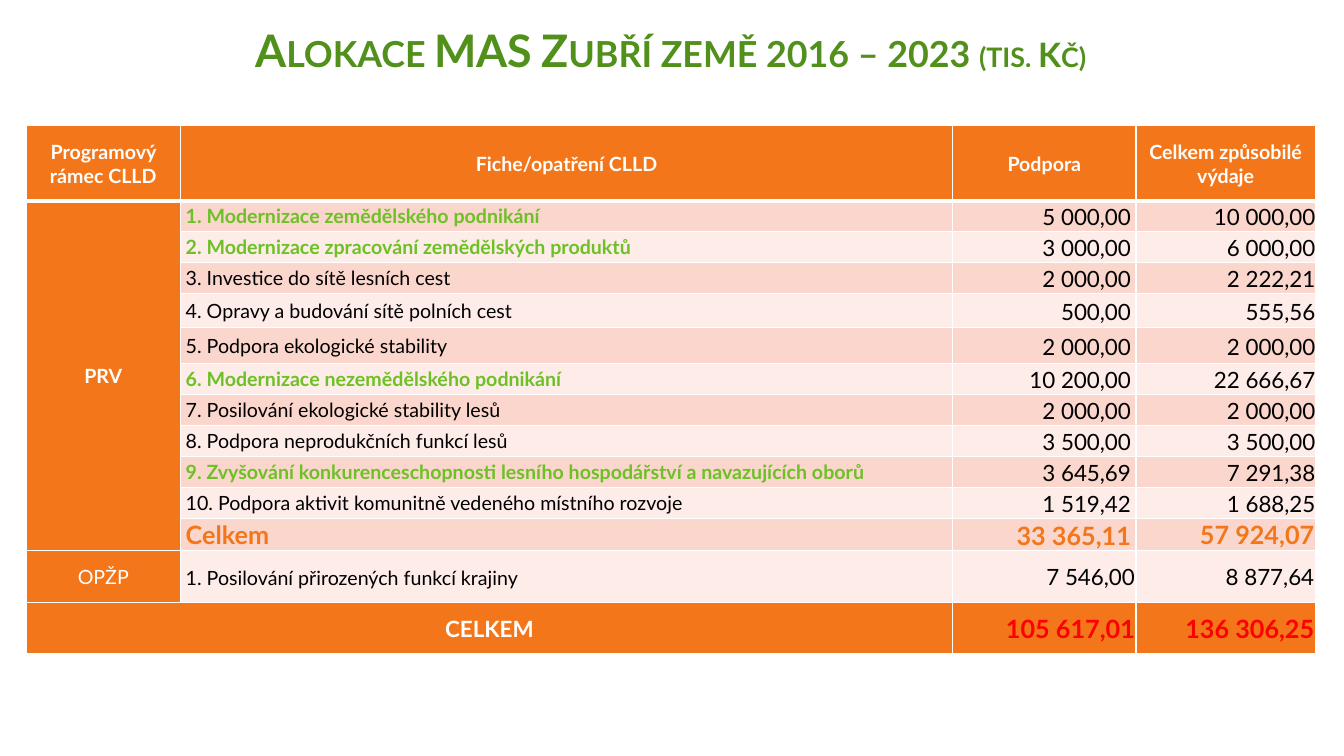
from collections import namedtuple
from dataclasses import dataclass

from lxml.etree import SubElement
from pptx import Presentation
from pptx.dml.color import RGBColor
from pptx.enum.text import MSO_ANCHOR, PP_ALIGN
from pptx.oxml import parse_xml
from pptx.oxml.ns import nsdecls, qn
from pptx.util import Cm, Pt

Box = namedtuple("Box", "left top width height")


@dataclass(frozen=True)
class Theme:
    """Colours, font and type sizes of the deck."""
    font: str = "Lato"
    white: str = "FFFFFF"
    black: str = "000000"
    orange: str = "F3771A"
    band_dark: str = "FAD6CD"
    band_light: str = "FDECE8"
    title_green: str = "52901C"
    highlight_green: str = "6DC025"
    red: str = "FF0000"
    title: int = 32
    unit: int = 24
    total: int = 18
    amount: int = 16
    label: int = 14


THEME = Theme()

TIGHT = (0.03, 0.03, 0.03, 0)
PADDED = (0.13, 0, 0.13, 0)
FLUSH = (0, 0, 0, 0)

COLUMN_WIDTHS = (3.89, 19.46, 4.62, 4.52)
HEADINGS = ("Programový rámec CLLD", "Fiche/opatření CLLD", "Podpora",
            "Celkem způsobilé výdaje")
HEADING_HEIGHT = 1.9
MEASURE_HEIGHT = 0.78
TALL_HEIGHTS = {4: 0.86, 5: 0.9}
SUMMARY_HEIGHT = 1.3
HIGHLIGHTED = {1, 2, 6, 9}
MEASURES = (
    ("1. Modernizace zemědělského podnikání", "5 000,00", "10 000,00"),
    ("2. Modernizace zpracování zemědělských produktů", "3 000,00", "6 000,00"),
    ("3. Investice do sítě lesních cest", "2 000,00", "2 222,21"),
    ("4. Opravy a budování sítě polních cest", "500,00", "555,56"),
    ("5. Podpora ekologické stability", "2 000,00", "2 000,00"),
    ("6. Modernizace nezemědělského podnikání", "10 200,00", "22 666,67"),
    ("7. Posilování ekologické stability lesů", "2 000,00", "2 000,00"),
    ("8. Podpora neprodukčních funkcí lesů", "3 500,00", "3 500,00"),
    ("9. Zvyšování konkurenceschopnosti lesního hospodářství a navazujících oborů",
     "3 645,69", "7 291,38"),
    ("10. Podpora aktivit komunitně vedeného místního rozvoje", "1 519,42", "1 688,25"),
)


def add_text(para, text, *, size, color, bold=False, align=PP_ALIGN.LEFT,
             spacing=None, small_caps=False):
    """Append a formatted span to a paragraph."""
    para.alignment = align
    if spacing:
        para.line_spacing = spacing
    span = para.add_run()
    span.text = text
    span.font.name = THEME.font
    span.font.size = Pt(size)
    span.font.bold = bold
    span.font.color.rgb = RGBColor.from_string(color)
    if small_caps:
        span.font._element.set("cap", "small")


def set_borders(cell, top=1, bottom=1):
    """Draw white borders of the given point widths around a cell."""
    properties = cell._tc.get_or_add_tcPr()
    widths = (("L", 1), ("R", 1), ("T", top), ("B", bottom))
    for position, (side, width) in enumerate(widths):
        line = parse_xml(f'<a:ln{side} {nsdecls("a")} w="{Pt(width)}"/>')
        fill = SubElement(line, qn("a:solidFill"))
        SubElement(fill, qn("a:srgbClr"), val=THEME.white)
        properties.insert(position, line)


def fill_cell(cell, text, *, insets=TIGHT, **text_format):
    """Write text into a vertically centred cell."""
    cell.vertical_anchor = MSO_ANCHOR.MIDDLE
    (cell.margin_left, cell.margin_top,
     cell.margin_right, cell.margin_bottom) = map(Cm, insets)
    add_text(cell.text_frame.paragraphs[0], text, **text_format)


def add_title(page, box):
    """Place the small-caps slide title in the box."""
    frame = page.shapes.add_textbox(*map(Cm, box)).text_frame
    frame.word_wrap = True
    frame.vertical_anchor = MSO_ANCHOR.BOTTOM
    para = frame.paragraphs[0]
    style = dict(color=THEME.title_green, bold=True, align=PP_ALIGN.CENTER,
                 spacing=0.9, small_caps=True)
    add_text(para, "Alokace MAS Zubří země 2016 – 2023 ", size=THEME.title, **style)
    add_text(para, "(tis. Kč)", size=THEME.unit, **style)


def paint_grid(table, total_row):
    """Set the fill and borders of every cell."""
    for row_index, row in enumerate(table.rows):
        for column_index, cell in enumerate(row.cells):
            band = THEME.band_dark if row_index % 2 else THEME.band_light
            solid = column_index == 0 or row_index in (0, total_row)
            cell.fill.solid()
            cell.fill.fore_color.rgb = RGBColor.from_string(
                THEME.orange if solid else band)
            set_borders(cell, top=3 if row_index == 1 else 1,
                        bottom=3 if row_index == 0 else 1)


def add_allocation_table(page, box):
    """Place the allocation table in the box."""
    subtotal_row = len(MEASURES) + 1
    second_row, total_row = subtotal_row + 1, subtotal_row + 2
    table = page.shapes.add_table(total_row + 1, len(HEADINGS), *map(Cm, box)).table
    table.horz_banding = False
    for column, width in zip(table.columns, COLUMN_WIDTHS):
        column.width = Cm(width)
    for index, row in enumerate(table.rows):
        row.height = Cm(TALL_HEIGHTS.get(index, MEASURE_HEIGHT))
    table.rows[0].height = Cm(HEADING_HEIGHT)
    for index in (second_row, total_row):
        table.rows[index].height = Cm(SUMMARY_HEIGHT)
    paint_grid(table, total_row)
    table.cell(1, 0).merge(table.cell(subtotal_row, 0))
    table.cell(total_row, 0).merge(table.cell(total_row, 1))

    heading = dict(size=THEME.label, color=THEME.white, bold=True, align=PP_ALIGN.CENTER)
    amount = dict(size=THEME.amount, color=THEME.black, align=PP_ALIGN.RIGHT)
    subtotal = dict(size=THEME.total, color=THEME.orange, bold=True)
    total = dict(size=THEME.total, color=THEME.red, bold=True, align=PP_ALIGN.RIGHT)

    for column, text in enumerate(HEADINGS):
        fill_cell(table.cell(0, column), text, **heading)
    fill_cell(table.cell(1, 0), "PRV", **heading)
    for row, (measure, support, expenses) in enumerate(MEASURES, start=1):
        marked = row in HIGHLIGHTED
        fill_cell(table.cell(row, 1), measure, insets=PADDED, size=THEME.label, bold=marked,
                  color=THEME.highlight_green if marked else THEME.black)
        fill_cell(table.cell(row, 2), support, insets=PADDED, spacing=1.07, **amount)
        fill_cell(table.cell(row, 3), expenses, insets=FLUSH, spacing=1.07, **amount)

    fill_cell(table.cell(subtotal_row, 1), "Celkem", insets=PADDED, **subtotal)
    fill_cell(table.cell(subtotal_row, 2), "33 365,11", insets=PADDED, spacing=1.07,
              align=PP_ALIGN.RIGHT, **subtotal)
    fill_cell(table.cell(subtotal_row, 3), "57 924,07", align=PP_ALIGN.RIGHT, **subtotal)

    fill_cell(table.cell(second_row, 0), "OPŽP", **{**heading, "bold": False})
    fill_cell(table.cell(second_row, 1), "1. Posilování přirozených funkcí krajiny",
              insets=PADDED, spacing=1.15, size=THEME.label, color=THEME.black)
    fill_cell(table.cell(second_row, 2), "7 546,00", **amount)
    fill_cell(table.cell(second_row, 3), "8 877,64", **amount)

    fill_cell(table.cell(total_row, 0), "CELKEM", **{**heading, "size": THEME.amount})
    fill_cell(table.cell(total_row, 2), "105 617,01", **total)
    fill_cell(table.cell(total_row, 3), "136 306,25", **total)


def main():
    """Build and save the deck."""
    deck = Presentation()
    deck.slide_width, deck.slide_height = Cm(33.87), Cm(19.05)
    page = deck.slides.add_slide(deck.slide_layouts[6])
    add_allocation_table(page, Box(0.66, 3.16, 32.49, 13.3))
    add_title(page, Box(0.66, 0.56, 32.49, 1.52))
    deck.save("out.pptx")


if __name__ == "__main__":
    main()
